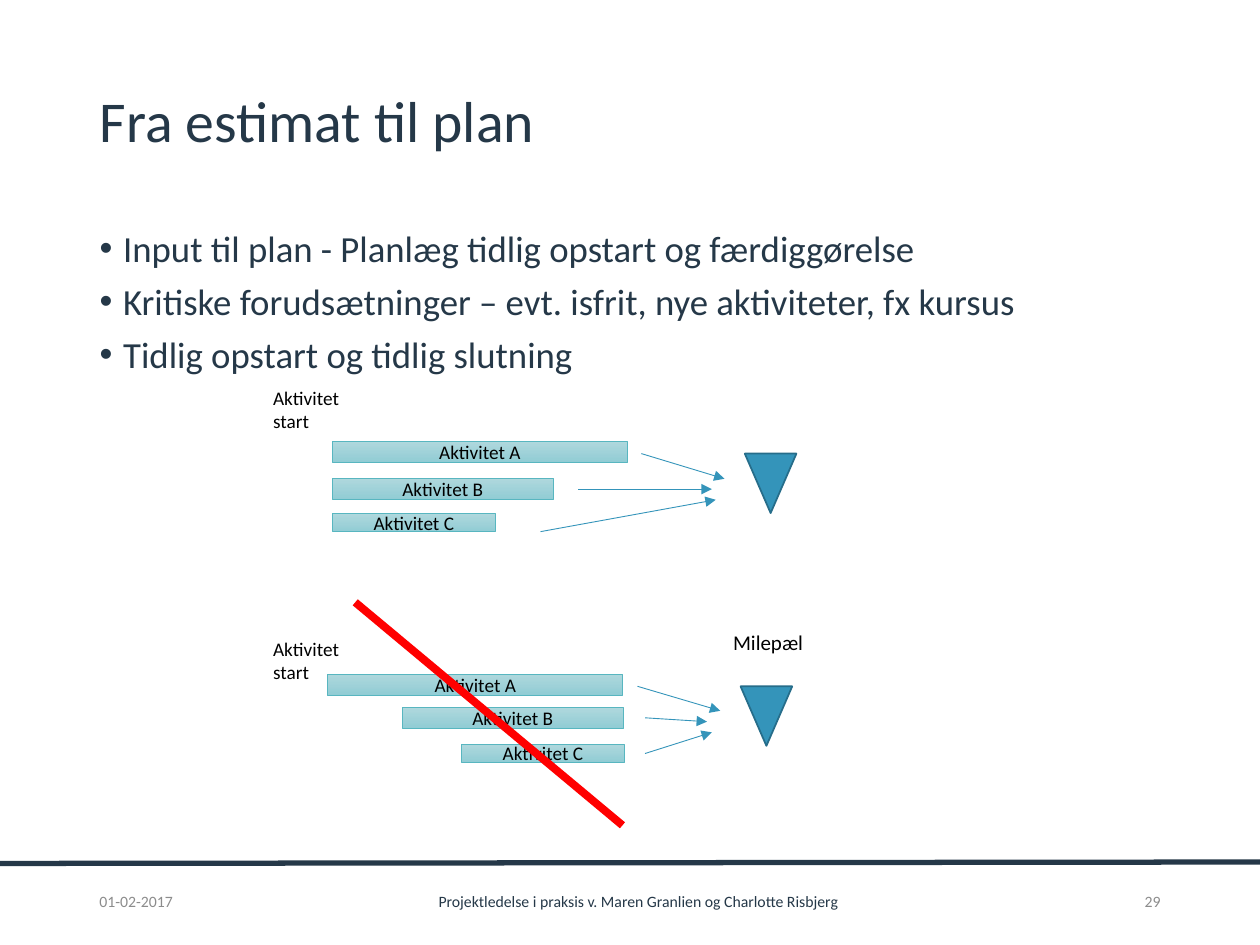
from lxml import etree
from pptx import Presentation
from pptx.dml.color import RGBColor
from pptx.enum.shapes import MSO_CONNECTOR, MSO_SHAPE
from pptx.enum.text import MSO_ANCHOR, MSO_AUTO_SIZE, PP_ALIGN
from pptx.oxml.ns import qn
from pptx.util import Pt

LEFT, CENTER, RIGHT = PP_ALIGN.LEFT, PP_ALIGN.CENTER, PP_ALIGN.RIGHT
TOP, MIDDLE = MSO_ANCHOR.TOP, MSO_ANCHOR.MIDDLE
NO_AUTOFIT = MSO_AUTO_SIZE.NONE
STRAIGHT = MSO_CONNECTOR.STRAIGHT
RECTANGLE, TRIANGLE = MSO_SHAPE.RECTANGLE, MSO_SHAPE.ISOSCELES_TRIANGLE

COLORS = {
    "navy": "253848", "gray": "8C8C8C", "black": "000000", "red": "FF0000",
    "blue": "3494BA", "blue_edge": "266D8A",
    "bar_top": "AFD8DD", "bar_bottom": "91CCD4", "bar_edge": "58B6C0",
}


def color(name):
    return RGBColor.from_string(COLORS[name])


class SlideBuilder:
    font = "Calibri"

    def __init__(self, slide):
        self.slide = slide

    def set_text(self, shape, lines, size, ink, align=LEFT, anchor=TOP, **formats):
        frame = shape.text_frame
        settings = {"word_wrap": True, "auto_size": NO_AUTOFIT, "vertical_anchor": anchor}
        for name, value in settings.items():
            setattr(frame, name, value)
        frame.text = "\n".join(lines)
        for paragraph in frame.paragraphs:
            for name, value in {"alignment": align, **formats}.items():
                setattr(paragraph, name, value)
            for run in paragraph.runs:
                for name, value in {"name": self.font, "size": Pt(size)}.items():
                    setattr(run.font, name, value)
                run.font.color.rgb = color(ink)

    def placeholder(self, index, box, lines, size, anchor, **formats):
        shape = self.slide.placeholders[index]
        for name, value in zip(("left", "top", "width", "height"), box):
            setattr(shape, name, Pt(value))
        self.set_text(shape, lines, size, "navy", anchor=anchor, **formats)
        return shape

    def bullets(self, box, lines, size, indent):
        shape = self.placeholder(1, box, lines, size, TOP,
                                 line_spacing=0.9, space_before=Pt(7.5))
        for paragraph in shape.text_frame.paragraphs:
            properties = paragraph._p.get_or_add_pPr()
            properties.set("marL", str(Pt(indent)))
            properties.set("indent", str(-Pt(indent)))

    def text(self, box, content, size, ink="black", align=LEFT, anchor=TOP):
        shape = self.slide.shapes.add_textbox(*map(Pt, box))
        self.set_text(shape, [content], size, ink, align, anchor)

    def shape(self, kind, box, edge, width):
        shape = self.slide.shapes.add_shape(kind, *map(Pt, box))
        shape.shadow.inherit = False
        shape.line.color.rgb = color(edge)
        shape.line.width = Pt(width)
        return shape

    def bar(self, box, content):
        shape = self.shape(RECTANGLE, box, "bar_edge", 0.5)
        shape.fill.gradient()
        shape.fill.gradient_angle = 270
        for stop, name in zip(shape.fill.gradient_stops, ("bar_top", "bar_bottom")):
            stop.color.rgb = color(name)
        self.set_text(shape, [content], 11, "black", CENTER, MIDDLE)

    def milestone(self, left, top):
        shape = self.shape(TRIANGLE, (left, top, 29.5, 34), "blue_edge", 1)
        shape.rotation = 180
        shape.fill.solid()
        shape.fill.fore_color.rgb = color("blue")

    def line(self, ends, ink, width, arrow=False):
        connector = self.slide.shapes.add_connector(STRAIGHT, *map(Pt, ends))
        connector.line.color.rgb = color(ink)
        connector.line.width = Pt(width)
        etree.SubElement(connector._element.spPr, qn("a:effectLst"))
        if arrow:
            outline = connector.line._get_or_add_ln()
            etree.SubElement(outline, qn("a:tailEnd"), type="triangle")


# Each plan: milestone corner, label top, bar (left, top), arrow ends
BARS = (("Aktivitet A", 168.5, 12), ("Aktivitet B", 126, 12), ("Aktivitet C", 93, 10.4))
PLANS = (
    {
        "milestone": (425.6, 259.2), "label_top": 217.4,
        "bars": ((190, 252.2), (190, 273.4), (190, 293.5)),
        "arrows": ((366.5, 259.2, 414, 273.6), (330.5, 279.5, 406.8, 279.5),
                   (308.9, 303.8, 409, 285.6)),
    },
    {
        "milestone": (423.2, 392.2), "label_top": 360.4,
        "bars": ((187.4, 385.2), (230, 404.2), (263.8, 425.2)),
        "arrows": ((364.3, 392.2, 411.6, 406.2), (368.6, 410.2, 404, 412.4),
                   (368.6, 430.6, 406.8, 418.5)),
    },
)


def main():
    presentation = Presentation()
    presentation.slide_width, presentation.slide_height = Pt(720), Pt(540)
    slide = presentation.slides.add_slide(presentation.slide_layouts[1])
    builder = SlideBuilder(slide)

    # Title and list
    builder.placeholder(0, (49.7, 18.7, 620.6, 104.4), ["Fra estimat til plan"],
                        33, MIDDLE, line_spacing=0.9)
    builder.bullets((49.7, 128.2, 620.6, 349.9), [
        "Input til plan - Planlæg tidlig opstart og færdiggørelse",
        "Kritiske forudsætninger – evt. isfrit, nye aktiviteter, fx kursus",
        "Tidlig opstart og tidlig slutning",
    ], 21, 13.5)

    # Footer
    builder.line((0, 493.4, 720, 492.6), "navy", 3)
    for left, width, content, ink, align in (
        (49.7, 71.3, "01-02-2017", "gray", LEFT),
        (127.4, 474.5, "Projektledelse i praksis v. Maren Granlien og Charlotte Risbjerg",
         "navy", CENTER),
        (614.9, 55.4, "29", "gray", RIGHT),
    ):
        builder.text((left, 500.4, width, 28.8), content, 9, ink, align, MIDDLE)

    # Early and late plans
    for plan in PLANS:
        builder.milestone(*plan["milestone"])
        for (name, width, height), corner in zip(BARS, plan["bars"]):
            builder.bar((*corner, width, height), name)
        for ends in plan["arrows"]:
            builder.line(ends, "blue", 0.5, arrow=True)
        builder.text((149, plan["label_top"], 64.8, 36), "Aktivitet start", 11)
    builder.text((411.8, 356.4, 64.1, 23), "Milepæl", 12)

    # Strike through the late plan
    builder.line((203, 344.2, 355.7, 471.6), "red", 4.5)

    presentation.save("out.pptx")


if __name__ == "__main__":
    main()
